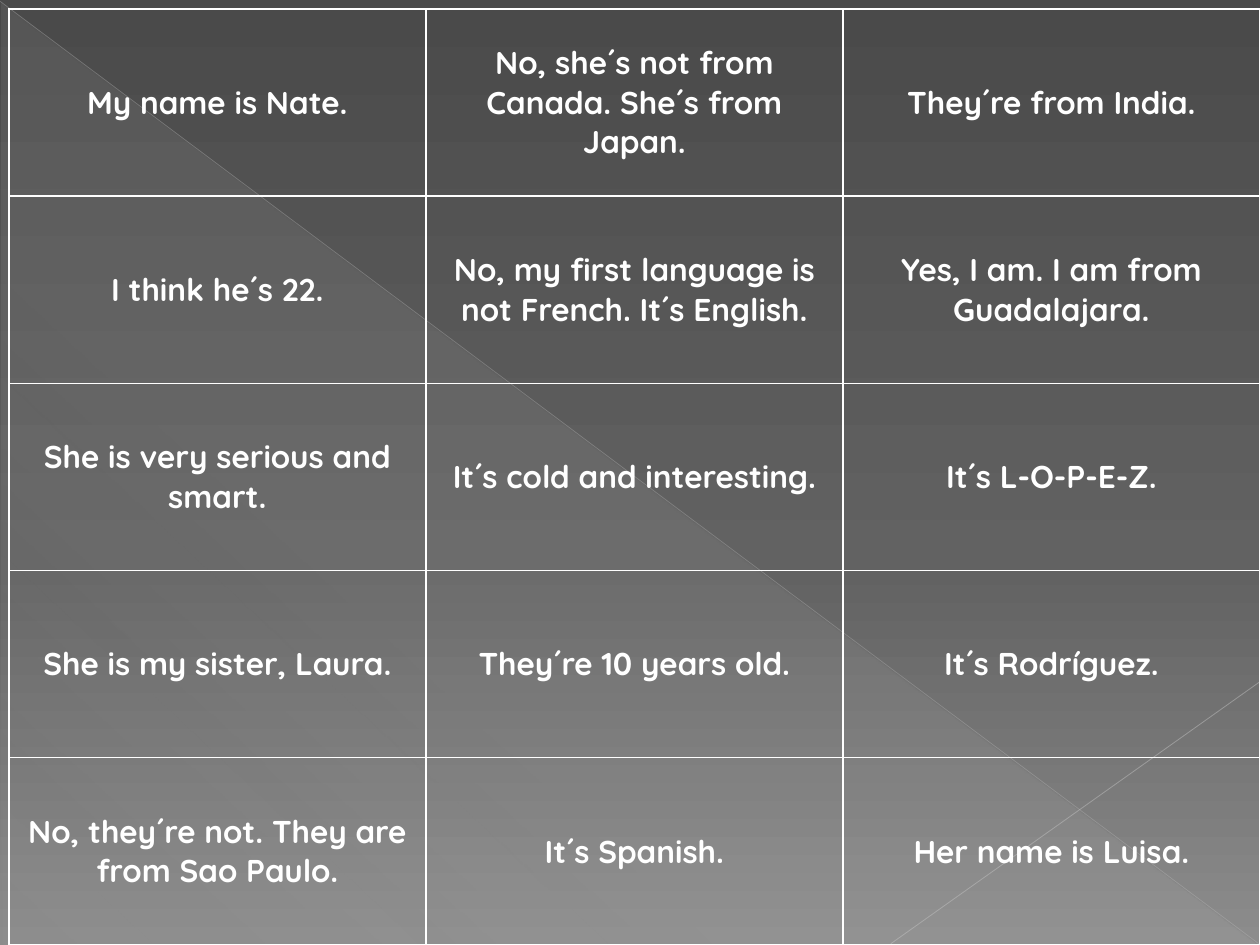
from lxml.etree import SubElement
from pptx import Presentation
from pptx.dml.color import RGBColor
from pptx.enum.shapes import MSO_CONNECTOR, MSO_SHAPE
from pptx.enum.text import MSO_ANCHOR, PP_ALIGN
from pptx.oxml.ns import qn
from pptx.util import Inches, Pt

WHITE = RGBColor(0xFF, 0xFF, 0xFF)
DARK_GRAY = RGBColor(0x4A, 0x4A, 0x4A)
MIDDLE_GRAY = RGBColor(0x62, 0x62, 0x62)
LIGHT_GRAY = RGBColor(0x8C, 0x8C, 0x8C)
TRIANGLE_GRAY = RGBColor(0xD2, 0xD2, 0xD2)
LONG_LINE_GRAY = RGBColor(0xBF, 0xBF, 0xBF)
SHORT_LINE_GRAY = RGBColor(0xC6, 0xC6, 0xC6)

FONT = "Quicksand"
ANSWERS = [
    ["My name is Nate.", "No, she´s not from Canada. She´s from Japan.", "They´re from India."],
    ["I think he´s 22.", "No, my first language is not French. It´s English.",
     "Yes, I am. I am from Guadalajara."],
    ["She is very serious and smart.", "It´s cold and interesting.", "It´s L-O-P-E-Z."],
    ["She is my sister, Laura.", "They´re 10 years old.", "It´s Rodríguez."],
    ["No, they´re not. They are from Sao Paulo.", "It´s Spanish.", "Her name is Luisa."],
]


def add_color(parent, color, opacity=100):
    element = SubElement(parent, qn("a:srgbClr"), val=str(color))
    if opacity < 100:
        SubElement(element, qn("a:alpha"), val=str(opacity * 1000))


def replace_with_gradient(solid_fill, stops, angle):
    """Swap a solid fill for a gradient of (position, color, opacity) stops."""
    parent = solid_fill.getparent()
    gradient = SubElement(parent, qn("a:gradFill"), rotWithShape="1")
    stop_list = SubElement(gradient, qn("a:gsLst"))
    for position, color, opacity in stops:
        stop = SubElement(stop_list, qn("a:gs"), pos=str(position * 1000))
        add_color(stop, color, opacity)
    SubElement(gradient, qn("a:lin"), ang=str(angle * 60000), scaled="0")
    parent.replace(solid_fill, gradient)


def set_background(slide):
    slide.background.fill.solid()
    solid_fill = slide.element.xpath(".//p:bgPr/a:solidFill")[0]
    stops = [(0, DARK_GRAY, 100), (60, MIDDLE_GRAY, 100), (100, LIGHT_GRAY, 100)]
    replace_with_gradient(solid_fill, stops, 90)


def add_triangle(slide):
    shape = slide.shapes.add_shape(
        MSO_SHAPE.RIGHT_TRIANGLE, Inches(0.01), Inches(0.02), Inches(9.98), Inches(7.48))
    shape.shadow.inherit = False
    shape.line.fill.background()
    shape.fill.solid()
    solid_fill = shape.element.xpath("./p:spPr/a:solidFill")[0]
    stops = [(0, TRIANGLE_GRAY, 10), (70, TRIANGLE_GRAY, 8), (100, TRIANGLE_GRAY, 1)]
    replace_with_gradient(solid_fill, stops, 133)


def add_line(slide, start, end, color, width, opacity):
    points = [Inches(value) for value in (*start, *end)]
    connector = slide.shapes.add_connector(MSO_CONNECTOR.STRAIGHT, *points)
    connector.line.width = Pt(width)
    connector.line.color.rgb = color
    color_element = connector.element.xpath("./p:spPr/a:ln/a:solidFill/a:srgbClr")[0]
    SubElement(color_element, qn("a:alpha"), val=str(opacity * 1000))
    SubElement(connector.element.spPr, qn("a:effectLst"))


def set_borders(cell, color, width):
    properties = cell._tc.get_or_add_tcPr()
    for side in ("lnL", "lnR", "lnT", "lnB"):
        border = SubElement(properties, qn(f"a:{side}"), w=str(Pt(width)))
        add_color(SubElement(border, qn("a:solidFill")), color)


def write_cell(cell, text):
    set_borders(cell, WHITE, 1)
    cell.fill.background()
    cell.vertical_anchor = MSO_ANCHOR.MIDDLE
    paragraph = cell.text_frame.paragraphs[0]
    paragraph.alignment = PP_ALIGN.CENTER
    run = paragraph.add_run()
    run.text = text
    run.font.name = FONT
    run.font.size = Pt(18)
    run.font.bold = True
    run.font.color.rgb = WHITE


def add_answer_table(slide):
    table = slide.shapes.add_table(
        len(ANSWERS), len(ANSWERS[0]),
        Inches(0.07), Inches(0.07), Inches(9.93), Inches(7.43)).table
    table.first_row = False
    table.horz_banding = False
    for row, answers in enumerate(ANSWERS):
        for column, answer in enumerate(answers):
            write_cell(table.cell(row, column), answer)


def main():
    presentation = Presentation()
    presentation.slide_width = Inches(10)
    presentation.slide_height = Inches(7.5)
    slide = presentation.slides.add_slide(presentation.slide_layouts[6])
    set_background(slide)
    add_triangle(slide)
    add_line(slide, (0, 0.01), (9.99, 7.49), LONG_LINE_GRAY, 0.39, 35)
    add_line(slide, (10, 5.41), (7.07, 7.49), SHORT_LINE_GRAY, 0.47, 45)
    add_answer_table(slide)
    presentation.save("out.pptx")


if __name__ == "__main__":
    main()
